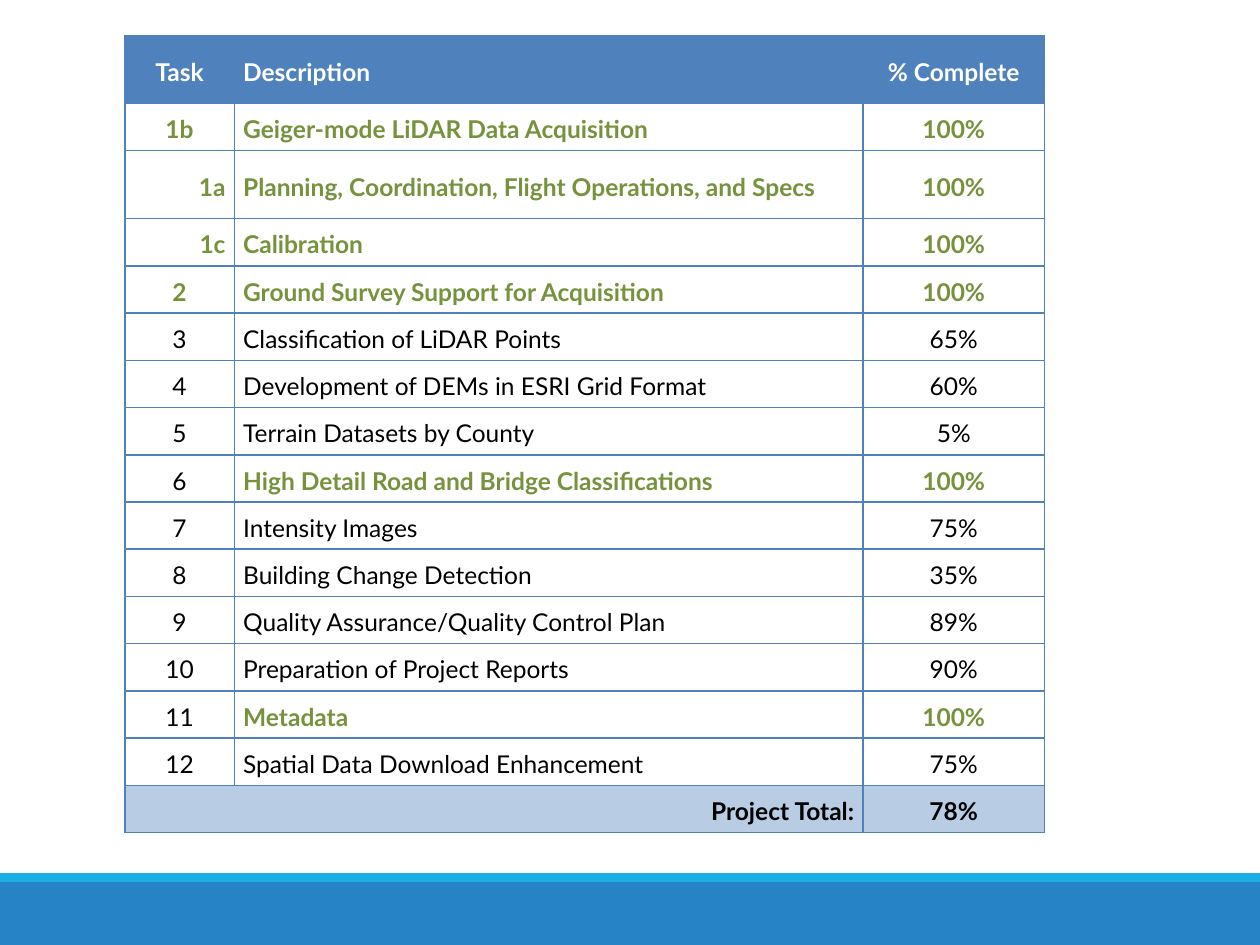
from lxml import etree
from pptx import Presentation
from pptx import util as u
from pptx.dml.color import RGBColor
from pptx.enum import shapes, text
from pptx.oxml.ns import qn

WIDTH, HEIGHT = u.Inches(10), u.Inches(7.5)
COLORS = {
    "header": "4F81BD", "border": "4F81BD", "total": "B8CCE4",
    "done": "76923C", "ink": "000000", "white": "FFFFFF",
    "band": "2683C6", "stripe": "1CADE4",
}
LEFT, CENTER, RIGHT = text.PP_ALIGN.LEFT, text.PP_ALIGN.CENTER, text.PP_ALIGN.RIGHT

# Column widths and row heights in percent of the slide
COLUMNS = [8.7, 49.9, 14.4]
ROW, TALL_ROW = 5, 7.2
TALL_TASKS = {"Task", "1a"}
SUBTASKS = {"1a", "1c"}
DONE_NUMBERS = {"1b", "1a", "1c", "2"}

TASKS = [
    ("1b", "Geiger-mode LiDAR Data Acquisition", 100),
    ("1a", "Planning, Coordination, Flight Operations, and Specs", 100),
    ("1c", "Calibration", 100),
    ("2", "Ground Survey Support for Acquisition", 100),
    ("3", "Classification of LiDAR Points", 65),
    ("4", "Development of DEMs in ESRI Grid Format", 60),
    ("5", "Terrain Datasets by County", 5),
    ("6", "High Detail Road and Bridge Classifications", 100),
    ("7", "Intensity Images", 75),
    ("8", "Building Change Detection", 35),
    ("9", "Quality Assurance/Quality Control Plan", 89),
    ("10", "Preparation of Project Reports", 90),
    ("11", "Metadata", 100),
    ("12", "Spatial Data Download Enhancement", 75),
]


def across(percent):
    return round(WIDTH * percent / 100)


def down(percent):
    return round(HEIGHT * percent / 100)


def color(name):
    return RGBColor.from_string(COLORS[name])


def add_bar(slide, top, height, fill):
    bar = slide.shapes.add_shape(shapes.MSO_SHAPE.RECTANGLE, 0, down(top), WIDTH, down(height))
    bar.shadow.inherit = False
    bar.fill.solid()
    bar.fill.fore_color.rgb = color(fill)
    bar.line.fill.background()


def add_borders(cell):
    properties = cell._tc.get_or_add_tcPr()
    for side in ("a:lnL", "a:lnR", "a:lnT", "a:lnB"):
        line = etree.SubElement(properties, qn(side), w=str(u.Pt(1)))
        fill = etree.SubElement(line, qn("a:solidFill"))
        etree.SubElement(fill, qn("a:srgbClr"), val=COLORS["border"])


def write(cell, words, align=LEFT, ink="ink", bold=False):
    cell.vertical_anchor = text.MSO_ANCHOR.MIDDLE
    cell.margin_left = cell.margin_right = u.Inches(0.07)
    cell.margin_top = cell.margin_bottom = 0
    para = cell.text_frame.paragraphs[0]
    para.alignment = align
    para.line_spacing = 1.15
    span = para.add_run()
    span.text = words
    span.font.name = "Lato"
    span.font.size = u.Pt(14)
    span.font.bold = bold
    span.font.color.rgb = color(ink)


def style_row(row, fill=None):
    for cell in row.cells:
        add_borders(cell)
        if fill:
            cell.fill.solid()
            cell.fill.fore_color.rgb = color(fill)
        else:
            cell.fill.background()


def write_task(cells, number, description, percent):
    done = {"ink": "done", "bold": True}
    status = done if percent == 100 else {}
    write(cells[0], number, align=RIGHT if number in SUBTASKS else CENTER,
          **(done if number in DONE_NUMBERS else {}))
    write(cells[1], description, **status)
    write(cells[2], f"{percent}%", align=CENTER, **status)


def add_task_table(slide):
    names = ["Task"] + [task[0] for task in TASKS] + ["Total"]
    heights = [TALL_ROW if name in TALL_TASKS else ROW for name in names]
    frame = slide.shapes.add_table(len(heights), len(COLUMNS), across(9.9), down(3.75),
                                   across(sum(COLUMNS)), down(sum(heights)))
    table = frame.table
    table.first_row = table.horz_banding = False
    for column, width in zip(table.columns, COLUMNS):
        column.width = across(width)
    rows = list(table.rows)
    for row, height in zip(rows, heights):
        row.height = down(height)

    # Header
    header, *body, total = rows
    style_row(header, "header")
    for cell, words, align in zip(header.cells, ("Task", "Description", "% Complete"),
                                  (CENTER, LEFT, CENTER)):
        write(cell, words, align=align, ink="white", bold=True)

    # Tasks
    for row, task in zip(body, TASKS):
        style_row(row)
        write_task(list(row.cells), *task)

    # Total
    style_row(total, "total")
    label, hidden, value = total.cells
    label.merge(hidden)
    write(label, "Project Total:", align=RIGHT, bold=True)
    write(value, "78%", align=CENTER, bold=True)


def main():
    deck = Presentation()
    deck.slide_width, deck.slide_height = WIDTH, HEIGHT
    slide = deck.slides.add_slide(deck.slide_layouts[6])
    # Footer band with its stripe
    add_bar(slide, 93.33, 6.67, "band")
    add_bar(slide, 92.4, 0.93, "stripe")
    add_task_table(slide)
    deck.save("out.pptx")


if __name__ == "__main__":
    main()
